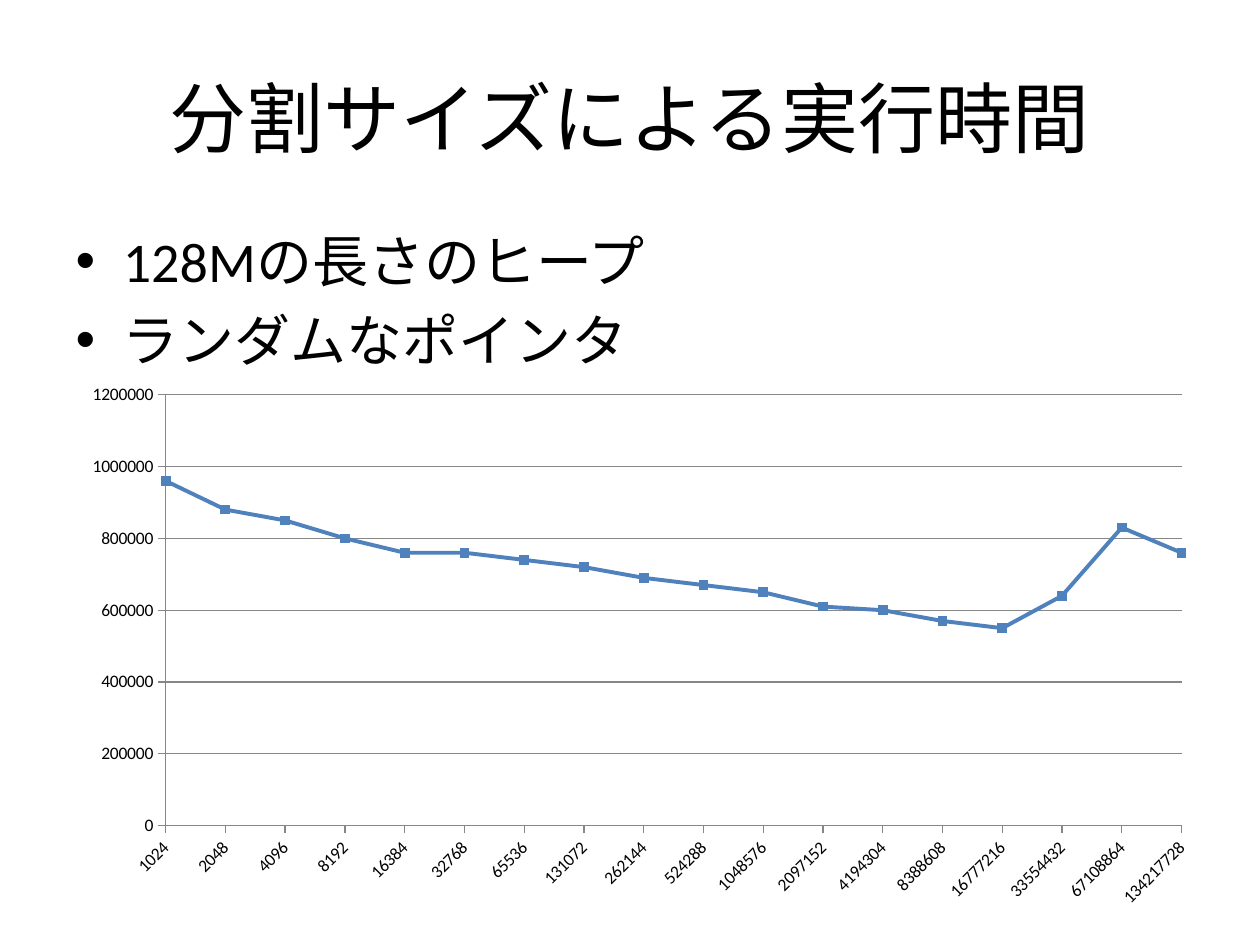
import pptx
import pptx.chart.data
import pptx.dml.color
import pptx.enum.chart
import pptx.enum.text
import pptx.oxml
import pptx.oxml.ns
import pptx.util
from pptx.util import Inches

BLACK = pptx.dml.color.RGBColor(0x00, 0x00, 0x00)
GRAY = pptx.dml.color.RGBColor(0x87, 0x87, 0x87)
BLUE = pptx.dml.color.RGBColor(0x4F, 0x81, 0xBD)
FONT = "Calibri"

SPLIT_SIZES = [str(2 ** power) for power in range(10, 28)]
RUN_TIMES = [960000, 880000, 850000, 800000, 760000, 760000,
             740000, 720000, 690000, 670000, 650000, 610000,
             600000, 570000, 550000, 640000, 830000, 760000]


def style_font(font, size):
    font.name = FONT
    font.size = pptx.util.Pt(size)
    font.color.rgb = BLACK


def fill_placeholder(placeholder, box, lines, size):
    placeholder.left, placeholder.top, placeholder.width, placeholder.height = box
    placeholder.text_frame.text = "\n".join(lines)
    for paragraph in placeholder.text_frame.paragraphs:
        for run in paragraph.runs:
            style_font(run.font, size)


def style_axis(axis):
    axis.major_tick_mark = pptx.enum.chart.XL_TICK_MARK.OUTSIDE
    axis.minor_tick_mark = pptx.enum.chart.XL_TICK_MARK.NONE
    axis.format.line.color.rgb = GRAY
    style_font(axis.tick_labels.font, 10)


def set_plot_layout(chart, x, y, w, h):
    """Fix the inner plot area as fractions of the chart's box."""
    plot_area = chart._chartSpace.chart.plotArea
    for old in plot_area.findall(pptx.oxml.ns.qn("c:layout")):
        plot_area.remove(old)
    parts = "".join(f'<c:{tag} val="{value}"/>' for tag, value in (
        ("layoutTarget", "inner"), ("xMode", "edge"), ("yMode", "edge"),
        ("x", x), ("y", y), ("w", w), ("h", h)))
    plot_area.insert(0, pptx.oxml.parse_xml(
        f'<c:layout {pptx.oxml.ns.nsdecls("c")}>'
        f'<c:manualLayout>{parts}</c:manualLayout></c:layout>'))


def start_line_on_axis(value_axis):
    """Place the categories on the tick marks; needs major_unit to be set."""
    qn = pptx.oxml.ns.qn
    for old in value_axis._element.findall(qn("c:crossBetween")):
        value_axis._element.remove(old)
    value_axis._element.find(qn("c:majorUnit")).addprevious(pptx.oxml.parse_xml(
        f'<c:crossBetween {pptx.oxml.ns.nsdecls("c")} val="midCat"/>'))


def add_time_chart(slide, box):
    data = pptx.chart.data.CategoryChartData()
    data.categories = SPLIT_SIZES
    data.add_series("Series 1", RUN_TIMES)
    chart = slide.shapes.add_chart(
        pptx.enum.chart.XL_CHART_TYPE.LINE_MARKERS, *box, data).chart
    chart.has_legend = False
    chart.has_title = False
    style_font(chart.font, 10)
    set_plot_layout(chart, 0.08, 0.04, 0.89, 0.79)

    sizes, times = chart.category_axis, chart.value_axis
    style_axis(sizes)
    style_axis(times)
    sizes.has_major_gridlines = False
    sizes._element.txPr.bodyPr.set("rot", "-2700000")
    times.minimum_scale = 0
    times.maximum_scale = 1200000
    times.major_unit = 200000
    times.has_major_gridlines = True
    times.major_gridlines.format.line.color.rgb = GRAY
    start_line_on_axis(times)

    plot = chart.plots[0]
    plot.vary_by_categories = False
    series = plot.series[0]
    series.smooth = False
    series.format.line.color.rgb = BLUE
    series.format.line.width = pptx.util.Pt(2.25)
    series.marker.style = pptx.enum.chart.XL_MARKER_STYLE.SQUARE
    series.marker.size = 5
    series.marker.format.fill.solid()
    series.marker.format.fill.fore_color.rgb = BLUE
    series.marker.format.line.color.rgb = BLUE


def main():
    deck = pptx.Presentation()
    deck.slide_width, deck.slide_height = Inches(10), Inches(7.5)
    slide = deck.slides.add_slide(deck.slide_layouts.get_by_name("Title and Content"))
    fill_placeholder(slide.shapes.title,
                     (Inches(0.5), Inches(0.3), Inches(9), Inches(1.25)),
                     ["分割サイズによる実行時間"], 44)
    fill_placeholder(slide.placeholders[1],
                     (Inches(0.5), Inches(1.75), Inches(9), Inches(4.95)),
                     ["128Mの長さのヒープ", "ランダムなポインタ"], 32)
    add_time_chart(slide, (Inches(0.59), Inches(2.96), Inches(9.06), Inches(4.33)))
    deck.save("out.pptx")


if __name__ == "__main__":
    main()
